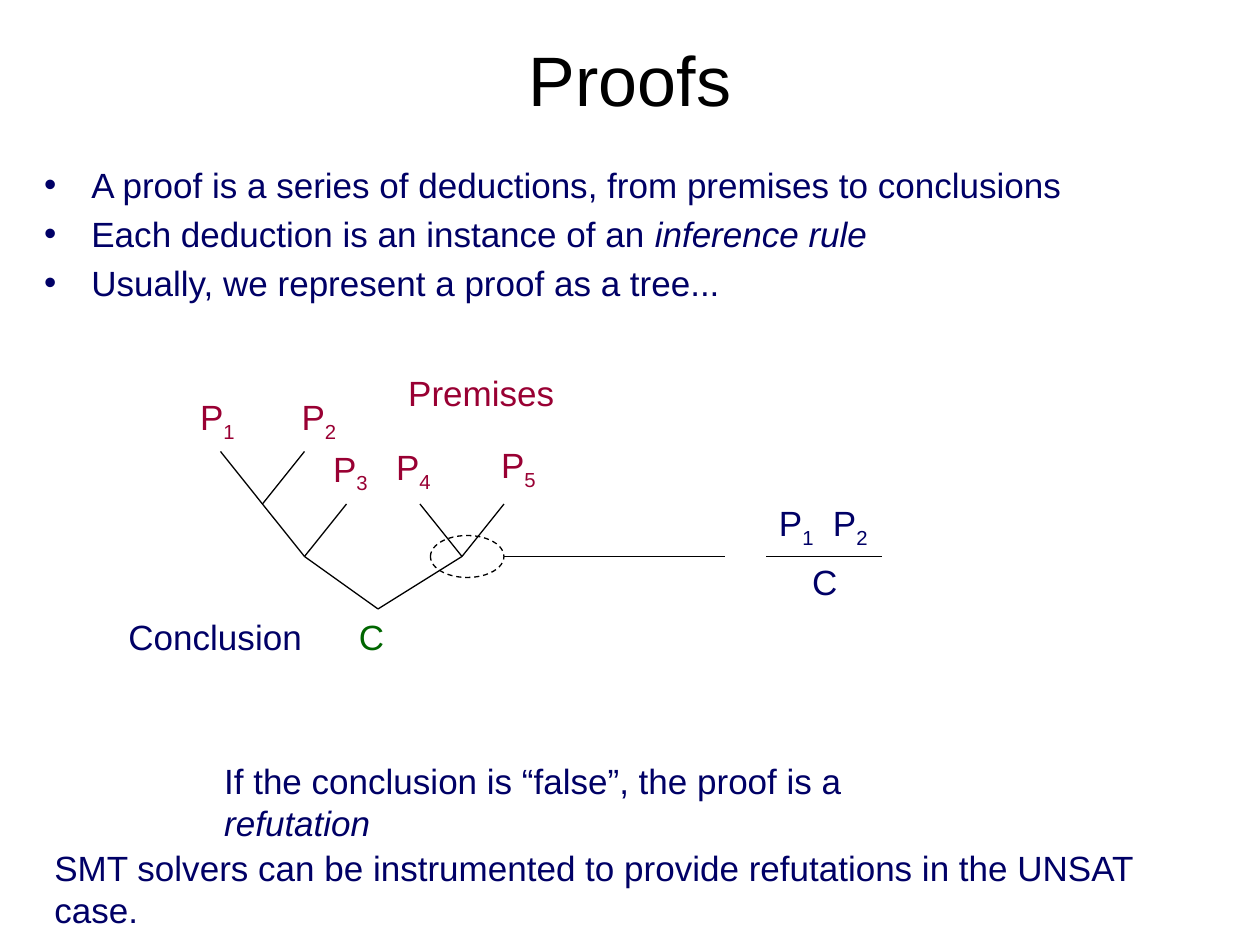
from pptx import Presentation
from pptx.dml.color import RGBColor
from pptx.enum.dml import MSO_LINE
from pptx.enum.shapes import MSO_CONNECTOR, MSO_SHAPE
from pptx.enum.text import MSO_ANCHOR, MSO_AUTO_SIZE, PP_ALIGN
from pptx.oxml.ns import qn
from pptx.util import Pt
from lxml import etree

LINE, OVAL, DASH = MSO_CONNECTOR.STRAIGHT, MSO_SHAPE.OVAL, MSO_LINE.DASH
LEFT, MID = PP_ALIGN.LEFT, PP_ALIGN.CENTER

THEME = {
    "font": "Arial", "head": 40, "text": 20, "line": 0.75,
    "black": RGBColor(0, 0, 0), "navy": RGBColor(0, 0, 0x66),
    "red": RGBColor(0x99, 0, 0x33), "green": RGBColor(0, 0x66, 0),
}


def write(par, runs, hue, size="text"):
    """Fill a paragraph; each run is (text, style), style "", "i" or "sub"."""
    for text, style in runs:
        run = par.add_run()
        run.text = text
        look = {"name": THEME["font"], "size": Pt(THEME[size])}
        if style == "i":
            look["italic"] = True
        for key, val in look.items():
            setattr(run.font, key, val)
        run.font.color.rgb = THEME[hue]
        if style == "sub":
            run._r.get_or_add_rPr().set("baseline", "-25000")


def draw(group, start, end):
    """Draw a thin black line between two points."""
    line = group.shapes.add_connector(LINE, *map(Pt, start + end))
    line.line.color.rgb = THEME["black"]
    line.line.width = Pt(THEME["line"])
    etree.SubElement(line._element.spPr, qn("a:effectLst"))


deck = Presentation()
deck.slide_width, deck.slide_height = Pt(720), Pt(540)
slide = deck.slides.add_slide(deck.slide_layouts[1])
title, body = slide.placeholders

# Title and bullet list
for box, top, high in ((title, 12, 66), (body, 90, 96)):
    box.left, box.top, box.width, box.height = map(Pt, (18, top, 684, high))
title.text_frame.vertical_anchor = MSO_ANCHOR.MIDDLE
head = title.text_frame.paragraphs[0]
head.alignment = MID
write(head, [("Proofs", "")], "black", "head")

points = [
    [("A proof is a series of deductions, from premises to conclusions", "")],
    [("Each deduction is an instance of an ", ""), ("inference rule", "i")],
    [("Usually, we represent a proof as a tree...", "")],
]
frame = body.text_frame
frame.auto_size = MSO_AUTO_SIZE.NONE
for num, runs in enumerate(points):
    par = frame.add_paragraph() if num else frame.paragraphs[0]
    props = par._p.get_or_add_pPr()
    props.set("marL", str(Pt(27)))
    props.set("indent", str(Pt(-27)))
    write(par, runs, "navy")

# Proof tree: each node with its parents above it
tree = slide.shapes.add_group_shape()
edges = {
    (150, 288): [(126, 258), (174, 258)],
    (174, 318): [(150, 288), (198, 288)],
    (264, 318): [(240, 288), (288, 288)],
    (216, 348): [(174, 318), (264, 318)],
}
for node, tops in edges.items():
    for top in tops:
        draw(tree, top, node)

# Inference step and its rule
rule = slide.shapes.add_group_shape()
ring = rule.shapes.add_shape(OVAL, Pt(246), Pt(306), Pt(42), Pt(24))
ring.shadow.inherit = False
ring.fill.background()
ring.line.color.rgb = THEME["black"]
ring.line.width = Pt(THEME["line"])
ring.line.dash_style = DASH
draw(rule, (288, 318), (414, 318))
draw(rule, (438, 318), (504, 318))

# Labels: parent, left, top, width, colour, alignment, wrap, runs
spots = [(106.5, 222.5), (164.5, 222.5), (182.5, 252), (218.5, 251), (278.5, 250)]
labels = [
    (tree, x, y, 35.5, "red", MID, False, [("P", ""), (str(num), "sub")])
    for num, (x, y) in enumerate(spots, 1)
]
labels += [
    (tree, 198, 348, 28.5, "green", MID, False, [("C", "")]),
    (tree, 226, 208.5, 98, "red", MID, False, [("Premises", "")]),
    (tree, 66, 348, 114, "navy", MID, False, [("Conclusion", "")]),
    (rule, 437, 283, 67, "navy", MID, False,
     [("P", ""), ("1", "sub"), ("  P", ""), ("2", "sub")]),
    (rule, 457, 317, 28.5, "navy", MID, False, [("C", "")]),
    (slide, 121, 430.5, 455, "navy", LEFT, True,
     [("If the conclusion is “false”, the proof is a ", ""),
      ("refutation", "i")]),
    (slide, 24, 480, 684, "navy", LEFT, True,
     [("SMT solvers can be instrumented to provide refutations "
       "in the UNSAT case.", "")]),
]
for home, x, y, wide, hue, align, wrap, runs in labels:
    box = home.shapes.add_textbox(Pt(x), Pt(y), Pt(wide), Pt(31))
    box.text_frame.word_wrap = wrap
    par = box.text_frame.paragraphs[0]
    par.alignment = align
    write(par, runs, hue)

deck.save("out.pptx")
